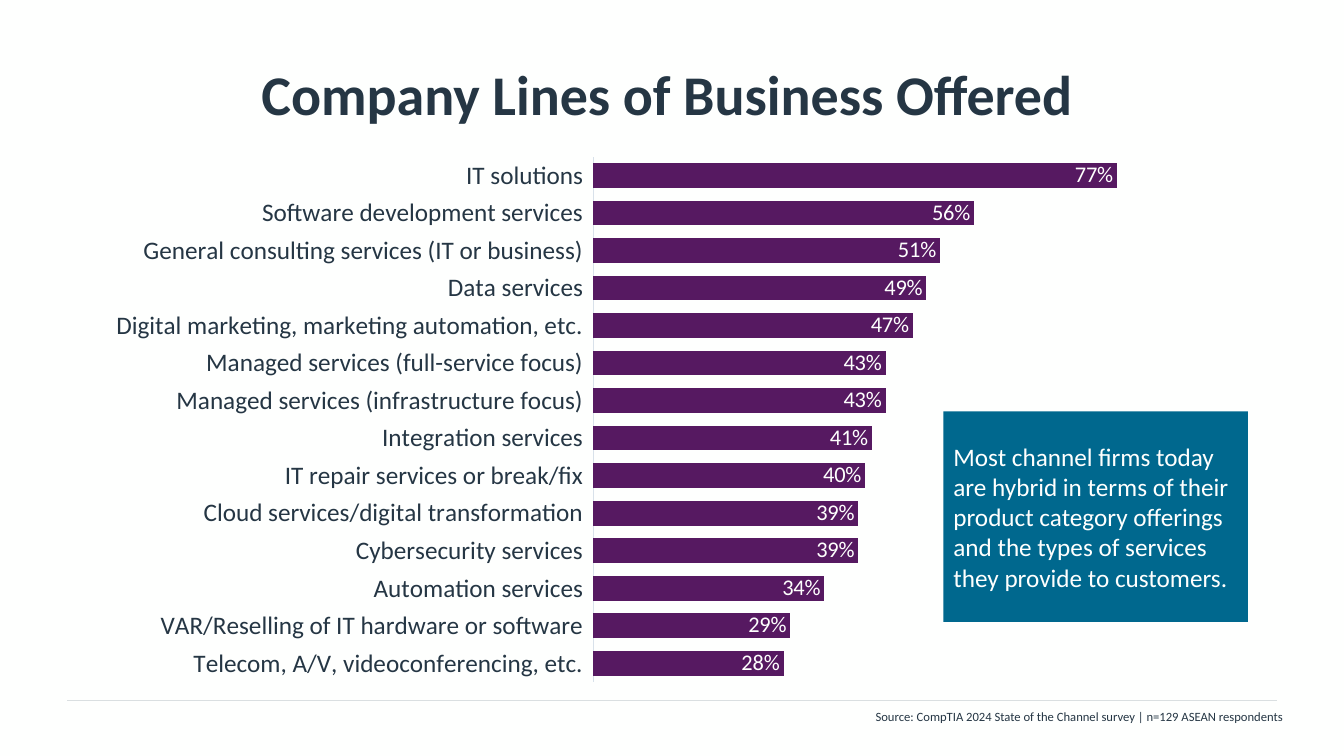
from dataclasses import dataclass

from pptx import Presentation
from pptx.chart.data import CategoryChartData
from pptx.dml.color import RGBColor
from pptx.enum.chart import XL_CHART_TYPE, XL_LABEL_POSITION, XL_TICK_LABEL_POSITION, XL_TICK_MARK
from pptx.enum.shapes import MSO_CONNECTOR, MSO_SHAPE
from pptx.enum.text import MSO_ANCHOR, PP_ALIGN
from pptx.oxml import parse_xml
from pptx.oxml.ns import nsdecls, qn
from pptx.util import Inches, Pt

BAR = XL_CHART_TYPE.BAR_CLUSTERED
INSIDE_END = XL_LABEL_POSITION.INSIDE_END
LABELS_LOW = XL_TICK_LABEL_POSITION.LOW
NO_TICK = XL_TICK_MARK.NONE
STRAIGHT = MSO_CONNECTOR.STRAIGHT
RECTANGLE = MSO_SHAPE.RECTANGLE
TOP, MIDDLE = MSO_ANCHOR.TOP, MSO_ANCHOR.MIDDLE
LEFT, CENTER, RIGHT = PP_ALIGN.LEFT, PP_ALIGN.CENTER, PP_ALIGN.RIGHT

WIDTH, HEIGHT = Inches(13.33), Inches(7.5)
COLUMNS, ROWS = 40, 30

# Share of respondents (%), from the top bar down
BUSINESS_LINES = {
    "IT solutions": 77,
    "Software development services": 56,
    "General consulting services (IT or business)": 51,
    "Data services": 49,
    "Digital marketing, marketing automation, etc.": 47,
    "Managed services (full-service focus)": 43,
    "Managed services (infrastructure focus)": 43,
    "Integration services": 41,
    "IT repair services or break/fix": 40,
    "Cloud services/digital transformation": 39,
    "Cybersecurity services": 39,
    "Automation services": 34,
    "VAR/Reselling of IT hardware or software": 29,
    "Telecom, A/V, videoconferencing, etc.": 28,
}


@dataclass(frozen=True)
class Theme:
    font: str = "Calibri"
    paper: RGBColor = RGBColor.from_string("FEFFFE")
    ink: RGBColor = RGBColor.from_string("253644")
    bar: RGBColor = RGBColor.from_string("561961")
    callout: RGBColor = RGBColor.from_string("00688E")
    rule: RGBColor = RGBColor.from_string("DADFE1")
    axis: RGBColor = RGBColor.from_string("D8E1EA")
    title_size: int = 40
    body_size: int = 18
    value_size: int = 16
    chart_size: int = 10
    source_size: int = 9


class SurveySlide:
    def __init__(self, slide, theme):
        self.slide, self.theme = slide, theme
        slide.background.fill.solid()
        slide.background.fill.fore_color.rgb = theme.paper

    def place(self, column, row, columns, rows):
        """Turn grid units into left, top, width and height."""
        return (round(column * WIDTH / COLUMNS), round(row * HEIGHT / ROWS),
                round(columns * WIDTH / COLUMNS), round(rows * HEIGHT / ROWS))

    def style(self, font, size, color, bold=False):
        font.name, font.size, font.bold = self.theme.font, Pt(size), bold
        font.color.rgb = color

    def set_words(self, frame, words, size, color, align, anchor, bold=False):
        frame.word_wrap = True
        frame.vertical_anchor = anchor
        paragraph = frame.paragraphs[0]
        paragraph.text = words
        paragraph.alignment = align
        self.style(paragraph.font, size, color, bold)
        return paragraph

    def title(self, words, *cell):
        frame = self.slide.shapes.add_textbox(*self.place(*cell)).text_frame
        frame.margin_left = 0
        self.set_words(frame, words, self.theme.title_size, self.theme.ink,
                       CENTER, MIDDLE, bold=True)

    def source(self, words, *cell):
        frame = self.slide.shapes.add_textbox(*self.place(*cell)).text_frame
        self.set_words(frame, words, self.theme.source_size, self.theme.ink, RIGHT, TOP)

    def callout(self, words, *cell):
        panel = self.slide.shapes.add_shape(RECTANGLE, *self.place(*cell))
        panel.shadow.inherit = False
        panel.fill.solid()
        panel.fill.fore_color.rgb = self.theme.callout
        panel.line.fill.background()
        message = self.set_words(panel.text_frame, words, self.theme.body_size,
                                 self.theme.paper, LEFT, MIDDLE)
        message.space_after = Pt(10)

    def rule(self, column, row, columns):
        left, top, width, _ = self.place(column, row, columns, 0)
        rule = self.slide.shapes.add_connector(STRAIGHT, left, top, left + width, top)
        rule.line.color.rgb = self.theme.rule
        rule.line.width = Pt(0.5)
        rule._element.spPr.append(parse_xml(f"<a:effectLst {nsdecls('a')}/>"))

    def bar_chart(self, percentages, *cell):
        bars = list(reversed(percentages.items()))
        data = CategoryChartData(number_format="0%")
        data.categories = [name for name, _ in bars]
        data.add_series("Series 1", [percent / 100 for _, percent in bars])
        chart = self.slide.shapes.add_chart(BAR, *self.place(*cell), data).chart
        chart.has_legend = chart.has_title = False
        self.style(chart.font, self.theme.chart_size, self.theme.ink)

        names = chart.category_axis
        names.major_tick_mark = names.minor_tick_mark = NO_TICK
        names.tick_label_position = LABELS_LOW
        names.format.line.color.rgb = self.theme.axis
        names.format.line.width = Pt(0.75)
        self.style(names.tick_labels.font, self.theme.body_size, self.theme.ink)

        scale = chart.value_axis
        scale.minimum_scale, scale.maximum_scale = 0, 0.79
        scale.has_major_gridlines = scale.visible = False

        plot = chart.plots[0]
        plot.gap_width = 51
        plot.vary_by_categories = False
        fill = plot.series[0].format.fill
        fill.solid()
        fill.fore_color.rgb = self.theme.bar

        plot.has_data_labels = True
        labels = plot.data_labels
        labels.show_value = True
        labels.position = INSIDE_END
        labels.number_format, labels.number_format_is_linked = "0%", False
        self.style(labels.font, self.theme.value_size, self.theme.paper)
        self.fix_plot(chart, x=0.5, y=0, w=0.5, h=1)

    def fix_plot(self, chart, **shares):
        """Pin the inner plot area to shares of the chart frame."""
        area = chart._chartSpace.chart.plotArea
        for automatic in area.findall(qn("c:layout")):
            area.remove(automatic)
        modes = "".join(f'<c:{side}Mode val="edge"/>' for side in "xy")
        sizes = "".join(f'<c:{side} val="{share}"/>' for side, share in shares.items())
        area.insert(0, parse_xml(
            f'<c:layout {nsdecls("c")}><c:manualLayout><c:layoutTarget val="inner"/>'
            f"{modes}{sizes}</c:manualLayout></c:layout>"))


def main():
    presentation = Presentation()
    presentation.slide_width, presentation.slide_height = WIDTH, HEIGHT
    blank = presentation.slide_layouts[6]
    page = SurveySlide(presentation.slides.add_slide(blank), Theme())

    page.rule(2, 27.8, 36)
    page.title("Company Lines of Business Offered", 2, 1.2, 36, 5)
    page.bar_chart(BUSINESS_LINES, 1.65, 6.2, 32, 20.88)
    page.source("Source: CompTIA 2024 State of the Channel survey | n=129 ASEAN respondents",
                19, 27.92, 19.47, 1)
    page.callout("Most channel firms today are hybrid in terms of their product category "
                 "offerings and the types of services they provide to customers.",
                 28.08, 16.32, 9.06, 8.36)
    presentation.save("out.pptx")


if __name__ == "__main__":
    main()
